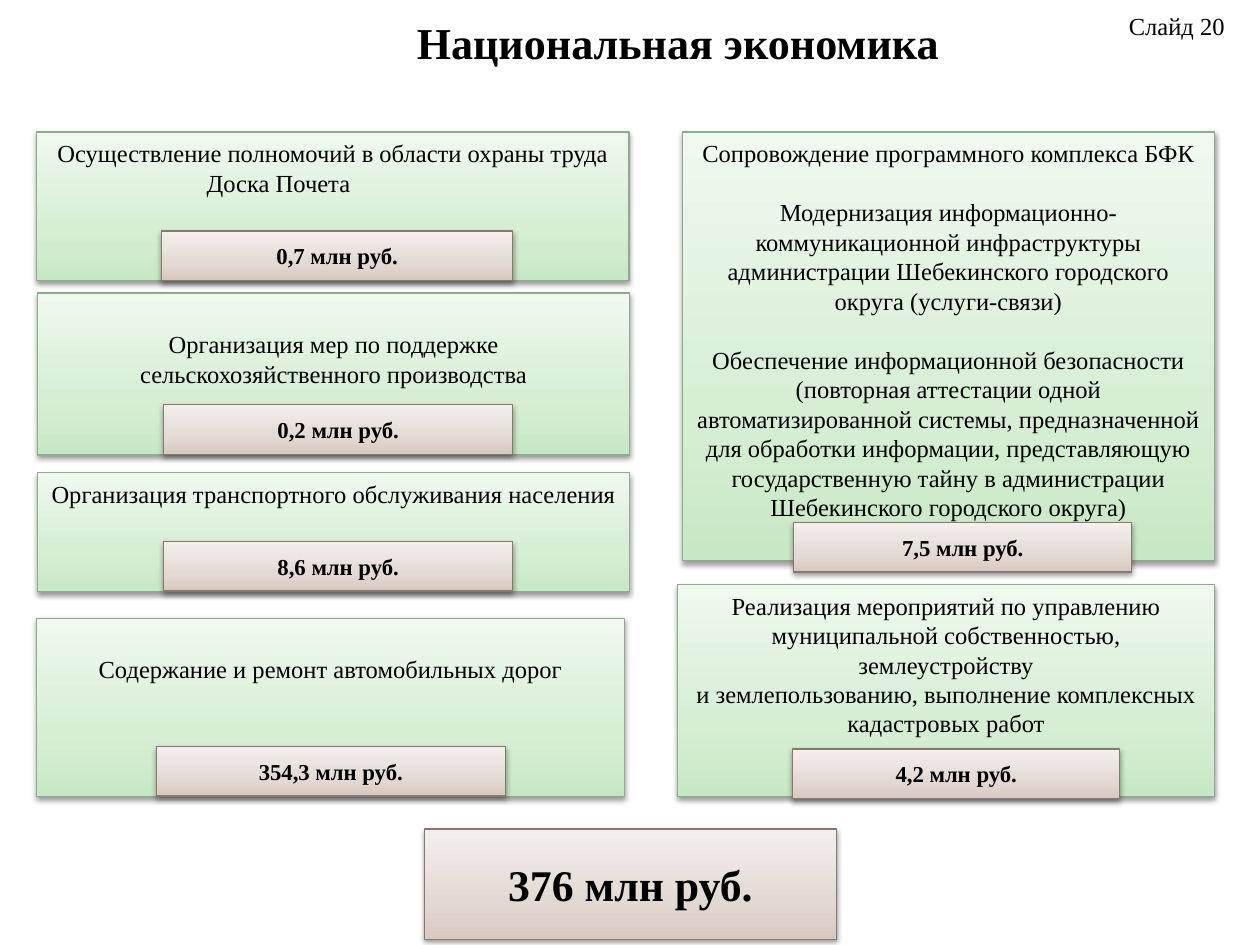
import copy
from dataclasses import dataclass

import pptx
import pptx.dml.color
import pptx.enum.shapes
import pptx.enum.text
import pptx.oxml
import pptx.oxml.ns
import pptx.util

Pt = pptx.util.Pt
RGB = pptx.dml.color.RGBColor.from_string
qn = pptx.oxml.ns.qn
ALIGN = pptx.enum.text.PP_ALIGN
ANCHOR = pptx.enum.text.MSO_ANCHOR


@dataclass(frozen=True)
class Theme:
    font: str = "Times New Roman"
    ink: str = "000000"
    green: tuple = ("C7E8C4", "D7EED5", "EFF9EE")
    green_line: str = "8BAD88"
    brown: tuple = ("D7C9C1", "E3D9D3", "F4F0EE")
    brown_line: str = "8A786D"
    stops: tuple = (0, 0.35, 1)
    line_width: float = 0.75
    title: float = 25.2
    total: float = 25
    body: float = 14
    amount: float = 13
    gap: float = 17


SHADOW = (
    '<a:outerShdw xmlns:a="http://schemas.openxmlformats.org/drawingml/2006/main"'
    ' blurRad="39370" dist="20320" dir="5400000" rotWithShape="0">'
    '<a:srgbClr val="000000"><a:alpha val="38000"/></a:srgbClr></a:outerShdw>'
)


class Builder:
    def __init__(self, slide, theme):
        self.slide = slide
        self.theme = theme

    def frame(self, s, **formats):
        tf = s.text_frame
        values = {"word_wrap": True, "margin_left": Pt(7.2), "margin_right": Pt(7.2),
                  "margin_top": Pt(3.6), "margin_bottom": Pt(3.6),
                  "vertical_anchor": ANCHOR.TOP, **formats}
        for name, value in values.items():
            setattr(tf, name, value)
        return tf

    def add_text(self, p, text, size, bold=False, align=ALIGN.CENTER):
        p.alignment = align
        r = p.add_run()
        r.text = text
        values = {"name": self.theme.font, "size": Pt(size), "bold": bold}
        for name, value in values.items():
            setattr(r.font, name, value)
        r.font.color.rgb = RGB(self.theme.ink)

    def title(self, text, box):
        s = self.slide.shapes.title
        for name, value in zip(("left", "top", "width", "height"), box):
            setattr(s, name, Pt(value))
        tf = self.frame(s, margin_left=Pt(26), margin_top=Pt(6))
        self.add_text(tf.paragraphs[0], text, self.theme.title, True)

    def label(self, text, box):
        s = self.slide.shapes.add_textbox(*map(Pt, box))
        tf = self.frame(s, word_wrap=False)
        self.add_text(tf.paragraphs[0], text, self.theme.body, align=ALIGN.LEFT)

    def panel(self, box, colors, line):
        s = self.slide.shapes.add_shape(
            pptx.enum.shapes.MSO_SHAPE.RECTANGLE, *map(Pt, box))
        s.fill.gradient()
        s.fill.gradient_angle = 90
        spPr = s._element.spPr
        stops = spPr.find(qn("a:gradFill")).find(qn("a:gsLst"))
        stops.insert(1, copy.deepcopy(stops[0]))
        for stop, position, color in zip(s.fill.gradient_stops, self.theme.stops, colors):
            stop.position = position
            stop.color.rgb = RGB(color)
        s.line.color.rgb = RGB(line)
        s.line.width = Pt(self.theme.line_width)
        s.shadow.inherit = False
        spPr.find(qn("a:effectLst")).append(pptx.oxml.parse_xml(SHADOW))
        return s

    def card(self, box, lines, top=3.6):
        s = self.panel(box, self.theme.green, self.theme.green_line)
        tf = self.frame(s, margin_top=Pt(top))
        for i, (text, before, indent) in enumerate(lines):
            p = tf.paragraphs[0] if i == 0 else tf.add_paragraph()
            if indent:
                p._p.get_or_add_pPr().set("marL", str(Pt(indent)))
            if before:
                p.space_before = Pt(before)
            align = ALIGN.LEFT if indent else ALIGN.CENTER
            self.add_text(p, text, self.theme.body, align=align)

    def amount(self, text, box, size):
        s = self.panel(box, self.theme.brown, self.theme.brown_line)
        tf = self.frame(s, vertical_anchor=ANCHOR.MIDDLE)
        self.add_text(tf.paragraphs[0], text, size, True)


def main():
    theme = Theme()
    gap = theme.gap
    lower = 3.6 + gap
    prs = pptx.Presentation()
    prs.slide_width, prs.slide_height = Pt(720), Pt(540)
    b = Builder(prs.slides.add_slide(prs.slide_layouts[5]), theme)

    b.title("Национальная экономика", (106, 3, 544, 67))
    b.label("Слайд 20", (638, 3, 70.5, 24.5))

    cards = [
        ((21, 75.5, 338.4, 85), 3.6,
         [("Осуществление полномочий в области охраны труда", 0, 0),
          ("Доска Почета", 0, 90)],
         "0,7 млн руб.", (92.3, 132, 200.7)),
        ((21.5, 167.5, 338.4, 92.5), lower,
         [("Организация мер по поддержке сельскохозяйственного производства", 0, 0)],
         "0,2 млн руб.", (93.5, 231.3, 199.5)),
        ((21.5, 270, 338.4, 68), 3.6,
         [("Организация транспортного обслуживания населения", 0, 0)],
         "8,6 млн руб.", (93.5, 309.5, 199.5)),
        ((21, 353.3, 335.7, 102), lower,
         [("Содержание и ремонт автомобильных дорог", 0, 0)],
         "354,3 млн руб.", (89.3, 426.7, 199.5)),
        ((390, 75.5, 304, 245), 3.6,
         [("Сопровождение программного комплекса БФК", 0, 0),
          ("Модернизация информационно-коммуникационной инфраструктуры "
           "администрации Шебекинского городского округа (услуги-связи)", gap, 0),
          ("Обеспечение информационной безопасности (повторная аттестации одной "
           "автоматизированной системы, предназначенной для обработки информации, "
           "представляющую государственную тайну в администрации Шебекинского "
           "городского округа)", gap, 0)],
         "7,5 млн руб.", (453.6, 298.7, 193)),
        ((387.3, 334, 306.7, 121.3), 3.6,
         [("Реализация мероприятий по управлению", 0, 0),
          ("муниципальной собственностью, землеустройству", 0, 0),
          ("и землепользованию, выполнение комплексных кадастровых работ", 0, 0)],
         "4,2 млн руб.", (452.9, 428, 187)),
    ]
    for box, top, lines, amount, place in cards:
        b.card(box, lines, top)
        b.amount(amount, (*place, 28.3), theme.amount)

    b.amount("376 млн руб.", (242.5, 473.7, 235.5, 63), theme.total)
    prs.save("out.pptx")


if __name__ == "__main__":
    main()
